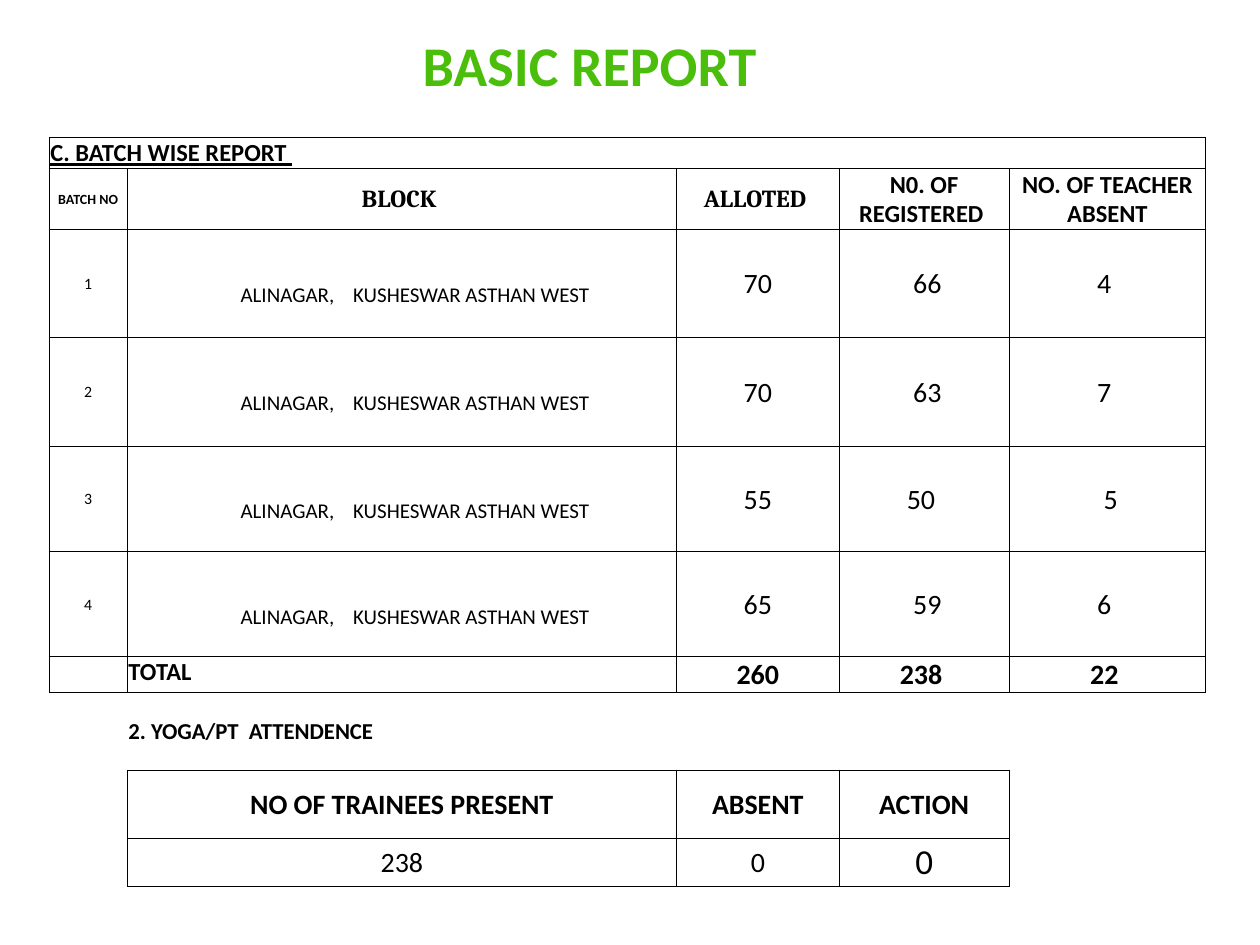
from dataclasses import dataclass, replace

from lxml.etree import SubElement
from pptx import Presentation
from pptx.dml.color import RGBColor
from pptx.enum.text import MSO_ANCHOR, PP_ALIGN
from pptx.oxml.ns import qn
from pptx.table import Table, _Cell
from pptx.util import Inches, Pt


@dataclass(frozen=True)
class Theme:
    font: str = "Calibri"
    accent_font: str = "Cambria"
    title_color: str = "4ABE0A"
    ink: str = "000000"
    paper: str = "FFFFFF"
    title: int = 32
    large: int = 20
    figure: int = 16
    heading: int = 14
    subheading: int = 13
    block: int = 12
    number: int = 9
    small: int = 8
    line: float = 0.5


THEME = Theme()


@dataclass(frozen=True)
class Style:
    size: int
    bold: bool = False
    underline: bool = False
    font: str = THEME.font
    align: PP_ALIGN = PP_ALIGN.CENTER
    anchor: MSO_ANCHOR = MSO_ANCHOR.MIDDLE
    left: float = 0.01
    top: float = 0.01
    filled: bool = False


@dataclass(frozen=True)
class Entry:
    text: str
    style: Style


@dataclass(frozen=True)
class Batch:
    number: str
    allotted: str
    registered: str
    absent: str


# Text styles
FIGURE = Style(THEME.figure)
TOTAL = replace(FIGURE, bold=True)
HEADING = Style(THEME.heading, bold=True, filled=True)
ACCENT = replace(HEADING, font=THEME.accent_font)
SECTION = replace(HEADING, underline=True, align=PP_ALIGN.LEFT, anchor=MSO_ANCHOR.BOTTOM)
TOTAL_LABEL = replace(HEADING, align=PP_ALIGN.LEFT, anchor=MSO_ANCHOR.TOP)
SUBHEADING = Style(THEME.subheading, bold=True, align=PP_ALIGN.LEFT)
NUMBER = Style(THEME.number, filled=True)
BLOCK = Style(THEME.block, anchor=MSO_ANCHOR.TOP, left=0.22, top=0.42)
ATTENDANCE = replace(TOTAL, filled=True)

# Table content
BLOCK_NAMES = "ALINAGAR,    KUSHESWAR ASTHAN WEST"
BATCHES = [
    Batch("1", "70", " 66", "4 "),
    Batch("2", "70", " 63", "7 "),
    Batch("3", "55", "50 ", " 5"),
    Batch("4", "65", " 59", "6 "),
]
COLUMN_WIDTHS = [0.62, 4.36, 1.29, 1.35, 1.56]
ROW_HEIGHTS = [0.22, 0.46, 0.86, 0.86, 0.84, 0.83, 0.24, 0.16, 0.3, 0.16, 0.54, 0.38]
TOTAL_ROW, SUBHEADING_ROW, ATTENDANCE_ROW = 6, 8, 10


def table_entries() -> dict[tuple[int, int], Entry]:
    """Map each (row, column) that holds text to its entry."""
    rows = {
        0: [Entry("C. BATCH WISE REPORT ", SECTION)],
        1: [
            Entry("BATCH NO", replace(HEADING, size=THEME.small)),
            Entry("BLOCK ", ACCENT),
            Entry("ALLOTED ", ACCENT),
            Entry("N0. OF REGISTERED ", HEADING),
            Entry("NO. OF TEACHER ABSENT", HEADING),
        ],
        TOTAL_ROW: [
            Entry("", NUMBER),
            Entry("TOTAL", TOTAL_LABEL),
            *(Entry(text, TOTAL) for text in ("260", "238 ", "22 ")),
        ],
    }
    for row, batch in enumerate(BATCHES, start=2):
        figures = (batch.allotted, batch.registered, batch.absent)
        rows[row] = [Entry(batch.number, NUMBER), Entry(BLOCK_NAMES, BLOCK),
                     *(Entry(text, FIGURE) for text in figures)]
    entries = {(row, column): entry for row, line in rows.items()
               for column, entry in enumerate(line)}

    # Attendance part starts in the second column
    entries[SUBHEADING_ROW, 1] = Entry("2. YOGA/PT  ATTENDENCE", SUBHEADING)
    headings = ("NO OF TRAINEES PRESENT", "ABSENT", "ACTION")
    values = (Entry("238", FIGURE), Entry("0", FIGURE),
              Entry("0", Style(THEME.large, filled=True)))
    for column, (heading, value) in enumerate(zip(headings, values), start=1):
        entries[ATTENDANCE_ROW, column] = Entry(heading, ATTENDANCE)
        entries[ATTENDANCE_ROW + 1, column] = value
    return entries


def is_framed(row: int, column: int) -> bool:
    in_report = 0 <= row <= TOTAL_ROW and 0 <= column < len(COLUMN_WIDTHS)
    in_attendance = ATTENDANCE_ROW <= row < len(ROW_HEIGHTS) and 1 <= column <= 3
    return in_report or in_attendance


def draw_borders(cell: _Cell, row: int, column: int) -> None:
    """Draw an edge when the cell on either side of it is framed."""
    properties = cell._tc.get_or_add_tcPr()
    neighbours = {"a:lnL": (row, column - 1), "a:lnR": (row, column + 1),
                  "a:lnT": (row - 1, column), "a:lnB": (row + 1, column)}
    for tag, neighbour in neighbours.items():
        line = SubElement(properties, qn(tag), w=str(Pt(THEME.line)))
        if is_framed(row, column) or is_framed(*neighbour):
            fill = SubElement(line, qn("a:solidFill"))
            SubElement(fill, qn("a:srgbClr"), val=THEME.ink)
        else:
            SubElement(line, qn("a:noFill"))


def write_cell(cell: _Cell, entry: Entry) -> None:
    style = entry.style
    cell.margin_left, cell.margin_top = Inches(style.left), Inches(style.top)
    cell.margin_right, cell.margin_bottom = Inches(0.01), 0
    cell.vertical_anchor = style.anchor
    if style.filled:
        cell.fill.solid()
        cell.fill.fore_color.rgb = RGBColor.from_string(THEME.paper)
    else:
        cell.fill.background()
    para = cell.text_frame.paragraphs[0]
    para.alignment = style.align
    if not entry.text:
        # An empty cell keeps its row low through its end mark
        SubElement(para._p, qn("a:endParaRPr"), sz=str(style.size * 100))
        return
    span = para.add_run()
    span.text = entry.text
    span.font.name, span.font.size = style.font, Pt(style.size)
    span.font.bold, span.font.underline = style.bold, style.underline
    span.font.color.rgb = RGBColor.from_string(THEME.ink)


def fill_table(table: Table) -> None:
    table.first_row = table.horz_banding = False
    for column, width in enumerate(COLUMN_WIDTHS):
        table.columns[column].width = Inches(width)
    entries = table_entries()
    blank = Entry("", Style(THEME.small))
    for row, height in enumerate(ROW_HEIGHTS):
        table.rows[row].height = Inches(height)
        for column in range(len(COLUMN_WIDTHS)):
            cell = table.cell(row, column)
            draw_borders(cell, row, column)
            write_cell(cell, entries.get((row, column), blank))
    table.cell(0, 0).merge(table.cell(0, 4))
    table.cell(SUBHEADING_ROW, 1).merge(table.cell(SUBHEADING_ROW, 3))


def main() -> None:
    deck = Presentation()
    deck.slide_width, deck.slide_height = Inches(10), Inches(7.5)
    page = deck.slides.add_slide(deck.slide_layouts[5])

    # Title
    title = page.shapes.title
    title.left, title.top = Inches(0.43), Inches(0.16)
    title.width, title.height = Inches(8.5), Inches(0.7)
    title.text_frame.vertical_anchor = MSO_ANCHOR.MIDDLE
    para = title.text_frame.paragraphs[0]
    para.alignment = PP_ALIGN.CENTER
    span = para.add_run()
    span.text = "BASIC REPORT"
    span.font.name, span.font.size, span.font.bold = THEME.font, Pt(THEME.title), True
    span.font.color.rgb = RGBColor.from_string(THEME.title_color)

    # Batch report and attendance
    frame = page.shapes.add_table(
        len(ROW_HEIGHTS), len(COLUMN_WIDTHS), Inches(0.39), Inches(1.09),
        Inches(sum(COLUMN_WIDTHS)), Inches(sum(ROW_HEIGHTS)))
    fill_table(frame.table)
    deck.save("out.pptx")


if __name__ == "__main__":
    main()
